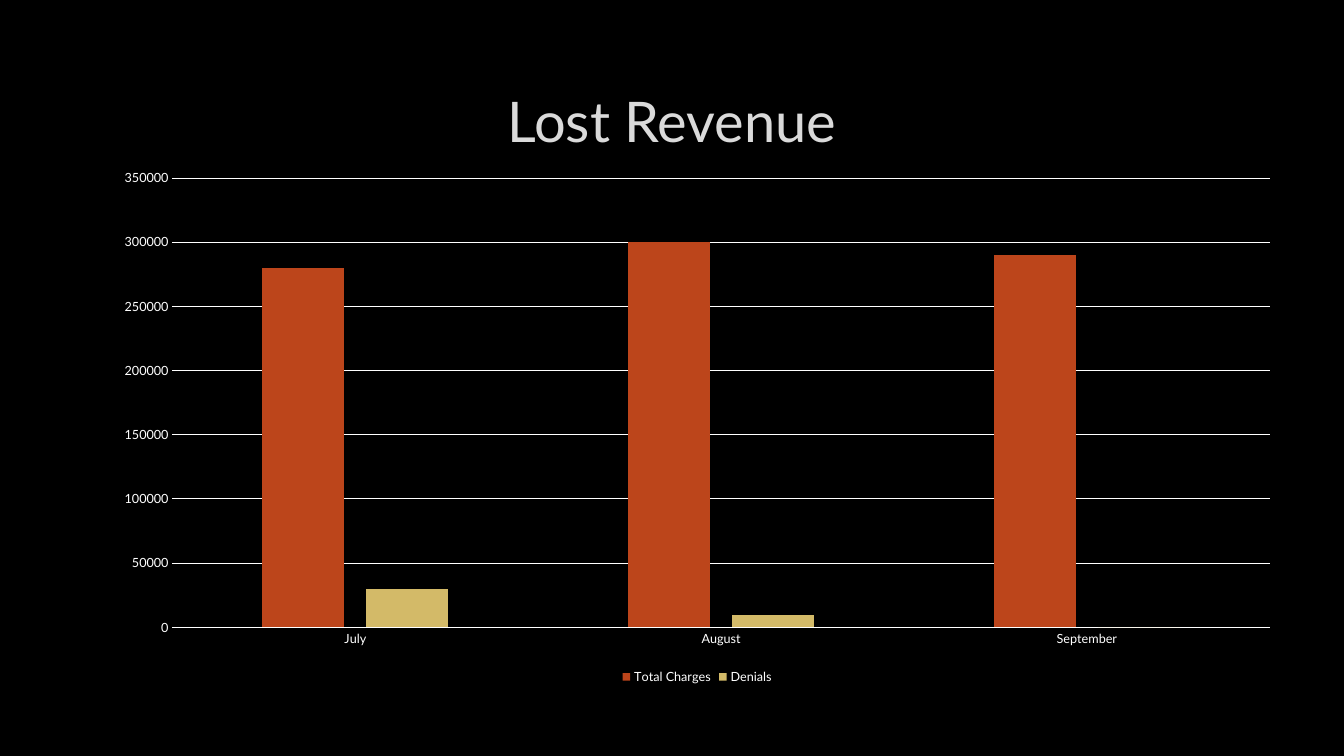
import pptx
import pptx.chart.data
import pptx.dml.color
import pptx.enum.chart
import pptx.enum.text
import pptx.oxml
import pptx.util

COLORS = {
    "background": "000000",
    "title": "DADADA",
    "outline": "404040",
    "text": "FFFFFF",
    "charges": "BC451B",
    "denials": "D3BA68",
}
FONT = "Lato"
COLUMNS, ROWS = 80, 90
MONTHS = ["July", "August", "September"]
SERIES = [
    ("Total Charges", "charges", (280000, 300000, 290000)),
    ("Denials", "denials", (30000, 10000, 0)),
]
OUTLINE_XML = (
    '<a:ln xmlns:a="http://schemas.openxmlformats.org/drawingml/2006/main" w="9525">'
    '<a:solidFill><a:srgbClr val="{}"><a:alpha val="10000"/></a:srgbClr></a:solidFill>'
    '<a:prstDash val="solid"/></a:ln>'
)


def rgb(name):
    return pptx.dml.color.RGBColor.from_string(COLORS[name])


def apply(target, formats):
    for name, value in formats.items():
        setattr(target, name, value)


class Deck:
    def __init__(self, width, height):
        self.prs = pptx.Presentation()
        apply(self.prs, {
            "slide_width": pptx.util.Inches(width),
            "slide_height": pptx.util.Inches(height),
        })
        self.s = self.prs.slides.add_slide(self.prs.slide_layouts[5])
        self.fill(self.s.background, "background")

    def box(self, col, row, cols, rows):
        w, h = self.prs.slide_width / COLUMNS, self.prs.slide_height / ROWS
        return [int(v) for v in (col * w, row * h, cols * w, rows * h)]

    def fill(self, target, color):
        target.fill.solid()
        target.fill.fore_color.rgb = rgb(color)

    def line(self, line, color):
        line.color.rgb = rgb(color)
        line.width = pptx.util.Pt(0.75)

    def font(self, font, size, color):
        apply(font, {"name": FONT, "size": pptx.util.Pt(size), "bold": False})
        font.color.rgb = rgb(color)

    def title(self, text, *cells):
        sp = self.s.shapes.title
        apply(sp, dict(zip(("left", "top", "width", "height"), self.box(*cells))))
        tf = sp.text_frame
        apply(tf, {
            "word_wrap": True,
            "vertical_anchor": pptx.enum.text.MSO_ANCHOR.MIDDLE,
        })
        p = tf.paragraphs[0]
        p.alignment = pptx.enum.text.PP_ALIGN.CENTER
        r = p.add_run()
        r.text = text
        self.font(r.font, 40, "title")
        outline = pptx.oxml.parse_xml(OUTLINE_XML.format(COLORS["outline"]))
        r._r.get_or_add_rPr().insert(0, outline)

    def column_chart(self, categories, series, *cells):
        data = pptx.chart.data.CategoryChartData()
        data.categories = categories
        for name, _, values in series:
            data.add_series(name, values)
        kind = pptx.enum.chart.XL_CHART_TYPE.COLUMN_CLUSTERED
        chart = self.s.shapes.add_chart(kind, *self.box(*cells), data).chart
        apply(chart, {"has_title": False, "has_legend": True})
        self.font(chart.font, 10, "text")
        apply(chart.legend, {
            "position": pptx.enum.chart.XL_LEGEND_POSITION.BOTTOM,
            "include_in_layout": False,
        })
        self.font(chart.legend.font, 9, "text")

        plot = chart.plots[0]
        apply(plot, {"gap_width": 219, "overlap": -27, "vary_by_categories": False})
        for ser, (_, color, _) in zip(plot.series, series):
            self.fill(ser.format, color)

        none = pptx.enum.chart.XL_TICK_MARK.NONE
        for axis in (chart.category_axis, chart.value_axis):
            apply(axis, {"major_tick_mark": none, "minor_tick_mark": none})
            self.font(axis.tick_labels.font, 9, "text")
        self.line(chart.category_axis.format.line, "text")
        axis = chart.value_axis
        apply(axis, {
            "minimum_scale": 0,
            "maximum_scale": 350000,
            "major_unit": 50000,
            "has_major_gridlines": True,
        })
        axis.format.line.fill.background()
        self.line(axis.major_gridlines.format.line, "text")


def main():
    deck = Deck(13.33, 7.5)
    deck.title("Lost Revenue", 6, 8, 68, 12.7)
    deck.column_chart(MONTHS, SERIES, 6, 19, 71, 63)
    deck.prs.save("out.pptx")


if __name__ == "__main__":
    main()
